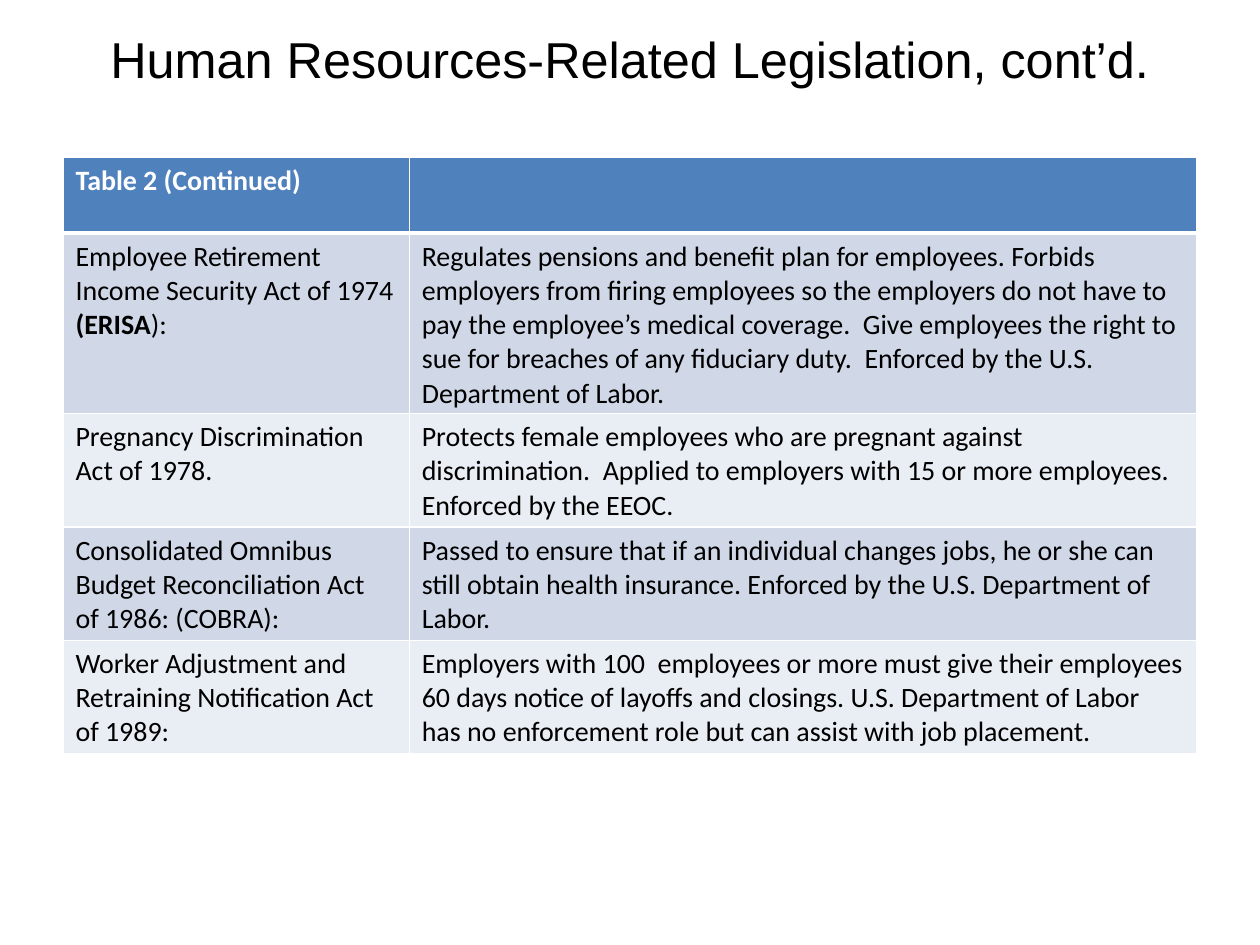
from dataclasses import dataclass

from lxml.etree import SubElement
from pptx import Presentation
from pptx.dml.color import RGBColor
from pptx.enum.text import MSO_ANCHOR, PP_ALIGN
from pptx.oxml.ns import qn
from pptx.util import Cm, Pt


@dataclass(frozen=True)
class Theme:
    """Colours, fonts and type sizes of the slide."""
    ink: str = "000000"
    paper: str = "FFFFFF"
    header: str = "4F81BD"
    bands: tuple = ("D0D8E8", "E9EDF4")
    title_font: str = "Arial"
    table_font: str = "Calibri"
    title_size: float = 28.8
    table_size: float = 16
    rule: float = 1
    header_rule: float = 3


THEME = Theme()
TITLE = "Human Resources-Related Legislation, cont’d."
HEADINGS = ([("Table 2 (Continued)", True)], [])
ACTS = [
    ([("Employee Retirement Income Security Act of 1974 ", False), ("(ERISA", True), ("):", False)],
     [("Regulates pensions and benefit plan for employees. Forbids employers from firing "
       "employees so the employers do not have to pay the employee’s medical coverage.  "
       "Give employees the right to sue for breaches of any fiduciary duty.  "
       "Enforced by the U.S. Department of Labor.", False)]),
    ([("Pregnancy Discrimination Act of 1978.", False)],
     [("Protects female employees who are pregnant against discrimination.  Applied to "
       "employers with 15 or more employees. Enforced by the EEOC.", False)]),
    ([("Consolidated Omnibus Budget Reconciliation Act  of 1986: (COBRA):", False)],
     [("Passed to ensure that if an individual changes jobs, he or she can still obtain "
       "health insurance. Enforced by the U.S. Department of Labor.", False)]),
    ([("Worker Adjustment and Retraining Notification Act of 1989:", False)],
     [("Employers with 100  employees or more must give their employees 60 days notice of "
       "layoffs and closings. U.S. Department of Labor has no enforcement role but can "
       "assist with job placement.", False)]),
]
COLUMN_WIDTHS = (6.98, 15.88)
ROW_HEIGHTS = (1.52, 1.8, 1.8, 2.18, 1.8)


def add_run(paragraph, wording, colour, **font_format):
    """Append a run with the given font attributes."""
    run = paragraph.add_run()
    run.text = wording
    run.font.color.rgb = RGBColor.from_string(colour)
    for attribute, setting in font_format.items():
        setattr(run.font, attribute, setting)


def add_title(slide, left, top, width, height):
    """Place the centred slide title in its box."""
    frame = slide.shapes.add_textbox(left, top, width, height).text_frame
    for attribute, setting in {"word_wrap": True, "vertical_anchor": MSO_ANCHOR.MIDDLE}.items():
        setattr(frame, attribute, setting)
    heading = frame.paragraphs[0]
    heading.alignment = PP_ALIGN.CENTER
    add_run(heading, TITLE, THEME.ink, name=THEME.title_font, size=Pt(THEME.title_size))


def rule_cell(cell, widths):
    """Draw the cell borders, with widths in points keyed by side."""
    properties = cell._tc.get_or_add_tcPr()
    for side, width in widths.items():
        border = SubElement(properties, qn(f"a:ln{side}"), w=str(Pt(width)))
        SubElement(SubElement(border, qn("a:solidFill")), qn("a:srgbClr"), val=THEME.paper)


def fill_cell(cell, wording, background, ink, widths):
    """Give a cell its borders, background and text."""
    rule_cell(cell, widths)
    cell.fill.solid()
    cell.fill.fore_color.rgb = RGBColor.from_string(background)
    paragraph = cell.text_frame.paragraphs[0]
    for text, bold in wording:
        add_run(paragraph, text, ink, name=THEME.table_font, size=Pt(THEME.table_size), bold=bold)


def add_legislation_table(slide, left, top, width, height):
    """Place the table of acts with a header and alternating bands."""
    rows = [HEADINGS, *ACTS]
    table = slide.shapes.add_table(len(rows), len(COLUMN_WIDTHS), left, top, width, height).table
    for column, column_width in zip(table.columns, COLUMN_WIDTHS):
        column.width = Cm(column_width)
    for index, (entries, row_height) in enumerate(zip(rows, ROW_HEIGHTS)):
        table.rows[index].height = Cm(row_height)
        widths = dict.fromkeys("LRTB", THEME.rule)
        background, ink = THEME.bands[(index - 1) % 2], THEME.ink
        if index == 0:
            background, ink = THEME.header, THEME.paper
            widths["B"] = THEME.header_rule
        elif index == 1:
            widths["T"] = THEME.header_rule
        for cell, wording in zip(table.rows[index].cells, entries):
            fill_cell(cell, wording, background, ink, widths)


def main():
    """Build the slide and save it."""
    deck = Presentation()
    deck.slide_width, deck.slide_height = Cm(25.4), Cm(19.05)
    slide = deck.slides.add_slide(deck.slide_layouts[6])
    margin = Cm(1.27)
    content_width = deck.slide_width - 2 * margin
    add_title(slide, margin, Cm(0), content_width, Cm(2.34))
    add_legislation_table(slide, margin, Cm(3.18), content_width, Cm(sum(ROW_HEIGHTS)))
    deck.save("out.pptx")


if __name__ == "__main__":
    main()
